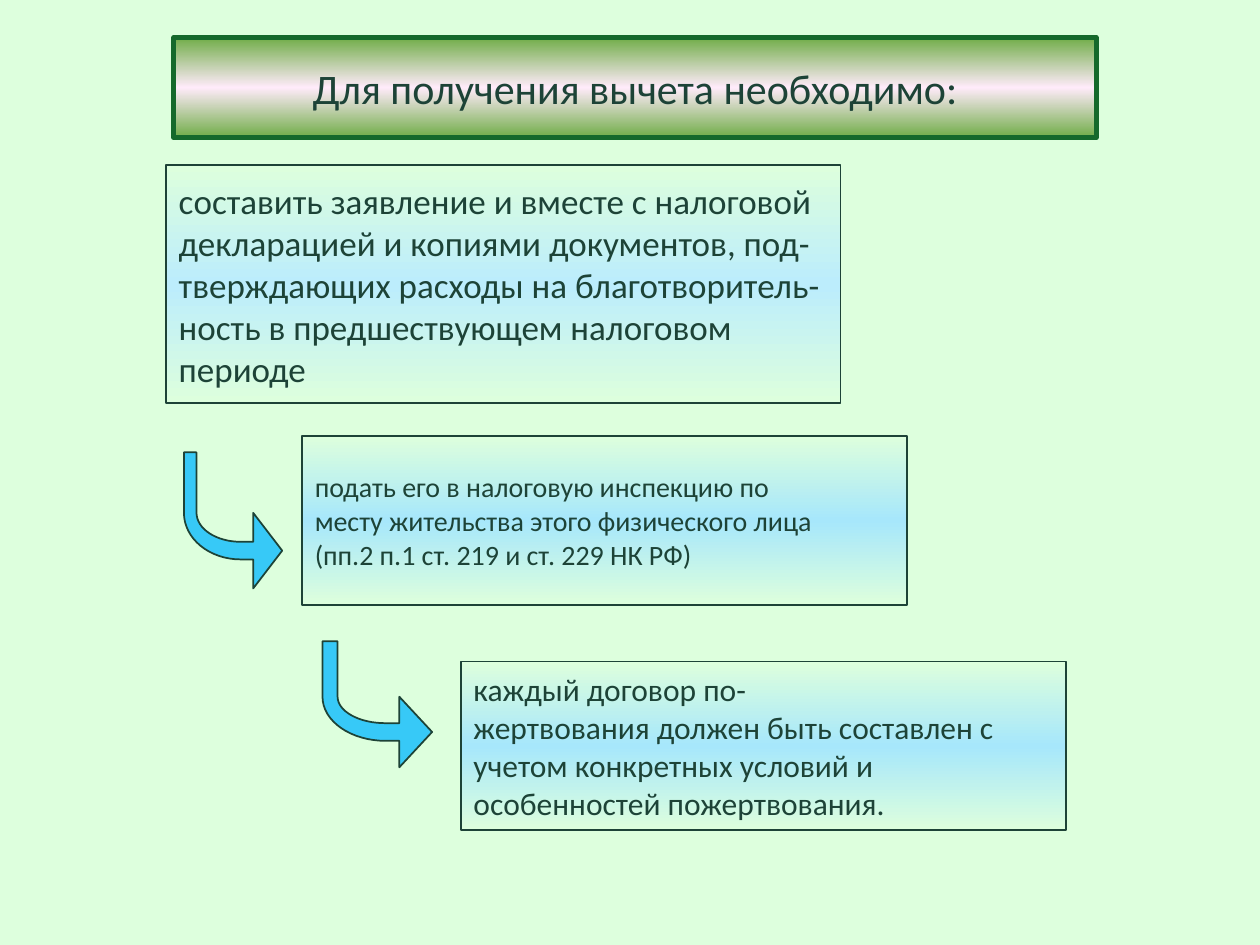
from copy import deepcopy
from math import cos, pi, sin

from pptx import Presentation
from pptx.dml.color import RGBColor
from pptx.enum.shapes import MSO_SHAPE
from pptx.enum.text import MSO_ANCHOR, PP_ALIGN
from pptx.oxml.ns import qn
from pptx.util import Inches, Pt

RECTANGLE = MSO_SHAPE.RECTANGLE
MIDDLE = MSO_ANCHOR.MIDDLE
LEFT, CENTER = PP_ALIGN.LEFT, PP_ALIGN.CENTER

MINT = RGBColor(0xDD, 0xFF, 0xDD)
DARK_GREEN = RGBColor(0x1D, 0x43, 0x37)
FRAME_GREEN = RGBColor(0x15, 0x69, 0x2B)
LEAF_GREEN = RGBColor(0x71, 0xAD, 0x49)
PALE_PINK = RGBColor(0xFF, 0xEB, 0xFA)
PALE_BLUE = RGBColor(0xBC, 0xED, 0xFC)
LIGHT_BLUE = RGBColor(0xA7, 0xE7, 0xFB)
ARROW_BLUE = RGBColor(0x37, 0xC9, 0xF7)

TITLE = ["Для получения вычета необходимо:"]
# Place, middle colour, text size, paragraphs
STEPS = [
    ((1.32, 1.31, 5.35, 1.89), PALE_BLUE, 20, [
        "составить заявление и вместе с налоговой",
        "декларацией и копиями документов, под-",
        "тверждающих расходы на благотворитель-",
        "ность в предшествующем налоговом периоде",
    ]),
    ((2.4, 3.46, 4.8, 1.34), LIGHT_BLUE, 16, [
        "подать его в налоговую инспекцию по",
        "месту жительства этого физического лица",
        "(пп.2 п.1 ст. 219 и ст. 229 НК РФ)",
    ]),
    ((3.66, 5.25, 4.8, 1.34), LIGHT_BLUE, 18, [
        "каждый договор по-",
        "жертвования должен быть составлен с учетом конкретных условий "
        "и особенностей пожертвования.",
    ]),
]
# Start, bend centre, tip, stem width, left side of head, half height of head
ARROWS = [
    ((1.46, 3.59), (1.91, 4.07), (2.24, 4.37), 0.1, 2.01, 0.3),
    ((2.56, 5.09), (3.06, 5.53), (3.43, 5.81), 0.12, 3.17, 0.28),
]
HALF_SHAFT = 0.07
CURVE_STEPS = 16


def set_outline(shape, color, width):
    shape.shadow.inherit = False
    shape.line.color.rgb = color
    shape.line.width = Pt(width)


def fill_mirrored(shape, edge, middle):
    """Vertical gradient from edge to middle and back to edge."""
    fill = shape.fill
    fill.gradient()
    fill.gradient_angle = 90
    stop_list = next(shape.element.iter(qn("a:gsLst")))
    stop_list.insert(1, deepcopy(stop_list[0]))
    for stop, position, color in zip(
            fill.gradient_stops, (0, 0.5, 1), (edge, middle, edge)):
        stop.position = position
        stop.color.rgb = color


def write_paragraphs(shape, texts, size, alignment):
    frame = shape.text_frame
    frame.word_wrap = True
    frame.vertical_anchor = MIDDLE
    font_format = {"name": "Calibri", "size": Pt(size)}
    for index, text in enumerate(texts):
        para = frame.add_paragraph() if index else frame.paragraphs[0]
        para.alignment = alignment
        span = para.add_run()
        span.text = text
        for name, value in font_format.items():
            setattr(span.font, name, value)
        span.font.color.rgb = DARK_GREEN


def add_box(slide, place, colors, outline, texts, size, alignment=LEFT):
    box = slide.shapes.add_shape(RECTANGLE, *map(Inches, place))
    fill_mirrored(box, *colors)
    set_outline(box, *outline)
    write_paragraphs(box, texts, size, alignment)


def quarter_curve(center, radius_x, radius_y):
    """Points of an ellipse from its bottom to its left side."""
    angles = [pi / 2 * (1 + step / CURVE_STEPS) for step in range(CURVE_STEPS + 1)]
    return [(center[0] + radius_x * cos(angle), center[1] + radius_y * sin(angle))
            for angle in angles]


def add_bent_arrow(slide, start, bend, tip, stem, head_left, half_head):
    left, top = start
    tip_x, tip_y = tip
    radius_x, radius_y = bend[0] - left, tip_y - bend[1]
    outer = quarter_curve(bend, radius_x, radius_y + HALF_SHAFT)
    inner = quarter_curve(bend, radius_x - stem, radius_y - HALF_SHAFT)
    points = [
        tip, (head_left, tip_y + half_head), (head_left, tip_y + HALF_SHAFT),
        *outer, start, (left + stem, top), *reversed(inner),
        (head_left, tip_y - HALF_SHAFT), (head_left, tip_y - half_head),
    ]
    corners = [(Inches(x), Inches(y)) for x, y in points]
    builder = slide.shapes.build_freeform(*corners[0])
    builder.add_line_segments(corners[1:], close=True)
    arrow = builder.convert_to_shape()
    arrow.fill.solid()
    arrow.fill.fore_color.rgb = ARROW_BLUE
    set_outline(arrow, DARK_GREEN, 1)


def main():
    deck = Presentation()
    deck.slide_width, deck.slide_height = Inches(10), Inches(7.5)
    slide = deck.slides.add_slide(deck.slide_layouts[6])
    slide.background.fill.solid()
    slide.background.fill.fore_color.rgb = MINT

    add_box(slide, (1.38, 0.3, 7.32, 0.79), (LEAF_GREEN, PALE_PINK),
            (FRAME_GREEN, 3), TITLE, 24, CENTER)
    for place, middle, size, texts in STEPS:
        add_box(slide, place, (MINT, middle), (DARK_GREEN, 1), texts, size)
    for arrow in ARROWS:
        add_bent_arrow(slide, *arrow)
    deck.save("out.pptx")


if __name__ == "__main__":
    main()
